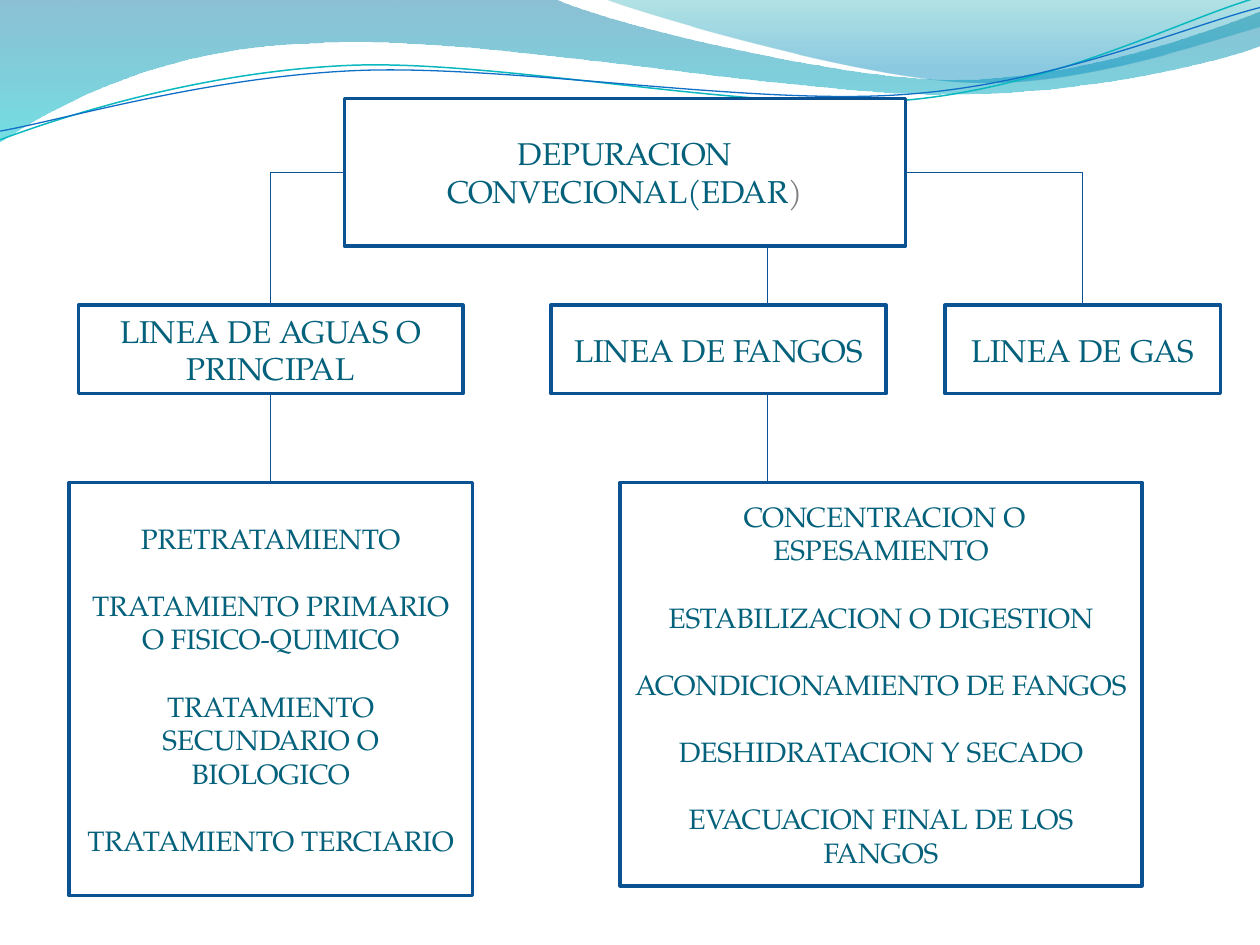
from pptx import Presentation
from pptx import util as u
from pptx.dml import color
from pptx.enum import shapes, text
from pptx.oxml import ns
from lxml import etree

FONT = "TeX Gyre Pagella"
INK = "04617B"
BORDER = "0B5292"
LINK = "095295"

BACK_WAVE = [(0, 0), (316.8, -0.7),
             (342.7, 12.2, 478, 45.4, 545.8, 45.4), (614.2, 45.4, 689.8, 18.7, 720, 6.5),
             (720.7, 25.9), (707.8, 31.7, 626.4, 54.7, 537.1, 54),
             (447.8, 54, 275, 20.2, 185, 24.5), (92.9, 25.9, 33.1, 59.8, -0.7, 81.4), (0, 0)]
FRONT_WAVE = [(344.9, -0.7), (366.5, 7.9, 491, 44.6, 553.7, 46.8),
              (616.3, 49.7, 691.9, 23, 720, 15.1), (720, 0), (344.9, -0.7)]
TEAL_LINE = [(0, 79.9), (34.6, 67, 113.8, 41, 199.4, 37.4),
             (284.4, 33.8, 427, 64.1, 513.4, 57.6), (599.8, 51.1, 675.4, 10.8, 718.6, -1.4)]
BLUE_LINE = [(0, 74.9), (33.8, 69.1, 118.1, 43.9, 203.8, 40.3),
             (290.2, 36.7, 429.8, 60.5, 516.2, 54), (601.9, 48.2, 677.5, 15.1, 720, 4.3)]

WATER_STEPS = ["PRETRATAMIENTO", "TRATAMIENTO PRIMARIO O FISICO-QUIMICO",
               "TRATAMIENTO SECUNDARIO O BIOLOGICO", "TRATAMIENTO TERCIARIO"]
SLUDGE_STEPS = [" CONCENTRACION O ESPESAMIENTO", "ESTABILIZACION O DIGESTION",
                "ACONDICIONAMIENTO DE FANGOS", "DESHIDRATACION Y SECADO",
                "EVACUACION FINAL DE LOS FANGOS"]


def rgb(value):
    return color.RGBColor.from_string(value)


def set_line(shape, value, width):
    shape.line.color.rgb = rgb(value)
    shape.line.width = u.Pt(width)


def add_outline(slide, segments, close):
    anchors = [(u.Pt(segment[-2]), u.Pt(segment[-1])) for segment in segments]
    builder = slide.shapes.build_freeform(*anchors[0], scale=1.0)
    builder.add_line_segments(anchors[1:], close=close)
    shape = builder.convert_to_shape()
    shape.shadow.inherit = False
    straight_parts = list(shape.element.spPr.iter(ns.qn("a:lnTo")))
    for part, segment in zip(straight_parts, segments[1:]):
        if len(segment) == 6:
            curve = etree.Element(ns.qn("a:cubicBezTo"))
            for x, y in zip(segment[::2], segment[1::2]):
                etree.SubElement(curve, ns.qn("a:pt"), x=str(u.Pt(x) - shape.left),
                                 y=str(u.Pt(y) - shape.top))
            part.getparent().replace(part, curve)
    return shape


def add_wave(slide, segments, stops):
    shape = add_outline(slide, segments, True)
    shape.line.fill.background()
    shape.fill.gradient()
    shape.fill.gradient_angle = 270
    for stop, (position, value, _) in zip(shape.fill.gradient_stops, stops):
        stop.position = position
        stop.color.rgb = rgb(value)
    for node, (_, _, opacity) in zip(shape.element.spPr.iter(ns.qn("a:srgbClr")), stops):
        etree.SubElement(node, ns.qn("a:alpha"), val=str(opacity * 1000))


def add_ripple(slide, segments, value, width):
    shape = add_outline(slide, segments, False)
    shape.fill.background()
    set_line(shape, value, width)


def add_text(paragraph, content, size=18, ink=INK):
    run = paragraph.add_run()
    run.text = content
    run.font.name = FONT
    run.font.size = u.Pt(size)
    run.font.color.rgb = rgb(ink)


def add_box(slide, left, top, width, height, lines, size=18, gap=0):
    shape = slide.shapes.add_shape(shapes.MSO_SHAPE.RECTANGLE,
                                   u.Pt(left), u.Pt(top), u.Pt(width), u.Pt(height))
    shape.shadow.inherit = False
    shape.fill.solid()
    shape.fill.fore_color.rgb = rgb("FFFFFF")
    set_line(shape, BORDER, 2)
    frame = shape.text_frame
    frame.word_wrap = True
    frame.vertical_anchor = text.MSO_ANCHOR.MIDDLE
    for index, line in enumerate(lines):
        paragraph = frame.add_paragraph() if index else frame.paragraphs[0]
        paragraph.alignment = text.PP_ALIGN.CENTER
        if index:
            paragraph.space_before = u.Pt(gap)
        add_text(paragraph, line, size=size)
    return shape


def add_link(slide, x1, y1, x2, y2):
    connector = slide.shapes.add_connector(shapes.MSO_CONNECTOR.STRAIGHT,
                                           u.Pt(x1), u.Pt(y1), u.Pt(x2), u.Pt(y2))
    properties = connector.element.spPr
    if x1 != x2:
        properties.find(ns.qn("a:prstGeom")).set("prst", "bentConnector2")
    set_line(connector, LINK, 0.75)
    etree.SubElement(properties, ns.qn("a:effectLst"))


def main():
    presentation = Presentation()
    presentation.slide_width, presentation.slide_height = u.Pt(720), u.Pt(540)
    slide = presentation.slides.add_slide(presentation.slide_layouts[6])

    add_wave(slide, BACK_WAVE, [(0, "0074A1", 45), (1, "00C6CF", 55)])
    add_wave(slide, FRONT_WAVE, [(0, "00A1A9", 30), (0.8, "008BBF", 45)])
    add_ripple(slide, TEAL_LINE, "0AB8BF", 0.85)
    add_ripple(slide, BLUE_LINE, "0F6FC6", 0.75)

    title = add_box(slide, 196.8, 56.2, 320.6, 84.4, ["DEPURACION CONVECIONAL(EDAR"])
    add_text(title.text_frame.paragraphs[0], ")", ink="808080")

    branch_top, branch_height, detail_top = 174.4, 50.6, 275.7
    for left, width, label in [(44.9, 219.6, "LINEA DE AGUAS O PRINCIPAL"),
                               (314.8, 191.6, "LINEA DE FANGOS"),
                               (540, 157.5, "LINEA DE GAS")]:
        add_box(slide, left, branch_top, width, branch_height, [label])
    for left, width, height, steps in [(39.4, 230.6, 236.1, WATER_STEPS),
                                       (354.4, 298.2, 230.5, SLUDGE_STEPS)]:
        add_box(slide, left, detail_top, width, height, steps, size=16, gap=19.2)

    water_x, sludge_x, gas_x, title_middle = 154.6, 438.6, 618.6, 98.6
    for x in (water_x, sludge_x):
        add_link(slide, x, branch_top + branch_height, x, detail_top)
    add_link(slide, sludge_x, 140.6, sludge_x, branch_top)
    add_link(slide, 517.4, title_middle, gas_x, branch_top)
    add_link(slide, 196.8, title_middle, water_x, branch_top)

    presentation.save("out.pptx")


if __name__ == "__main__":
    main()
